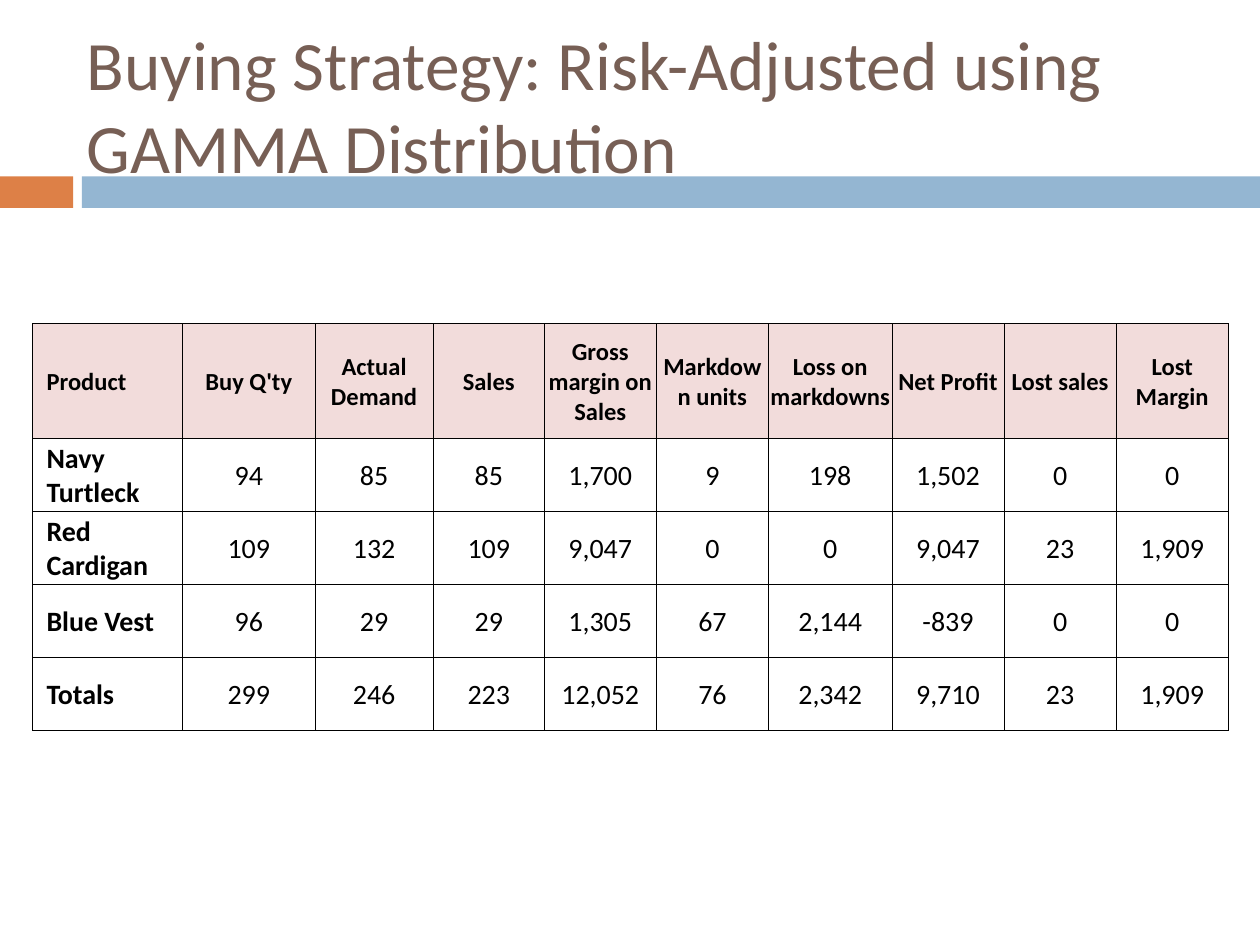
from lxml.etree import SubElement
from pptx import Presentation
from pptx.dml.color import RGBColor
from pptx.enum.shapes import MSO_SHAPE
from pptx.enum.text import MSO_ANCHOR, PP_ALIGN
from pptx.oxml.ns import qn
from pptx.util import Inches, Pt

FONT = "Calibri"
COLUMN_WIDTHS = [1.19, 1.05, 0.94, 0.88, 0.89, 0.89, 0.98, 0.89, 0.89, 0.89]
ROW_HEIGHTS = [0.91, 0.58, 0.58, 0.58, 0.58]
ROWS = [
    ["Product", "Buy Q'ty", "Actual Demand", "Sales", "Gross margin on Sales",
     "Markdown units", "Loss on markdowns", "Net Profit", "Lost sales", "Lost Margin"],
    ["Navy Turtleck", "94", "85", "85", "1,700", "9", "198", "1,502", "0", "0"],
    ["Red Cardigan", "109", "132", "109", "9,047", "0", "0", "9,047", "23", "1,909"],
    ["Blue Vest", "96", "29", "29", "1,305", "67", "2,144", "-839", "0", "0"],
    ["Totals", "299", "246", "223", "12,052", "76", "2,342", "9,710", "23", "1,909"],
]


def color(value):
    return RGBColor.from_string(value)


def set_attributes(target, values):
    for name, value in values.items():
        setattr(target, name, value)


def write_text(paragraph, text, size, text_color, bold=False):
    run = paragraph.add_run()
    run.text = text
    set_attributes(run.font, {"name": FONT, "size": Pt(size), "bold": bold})
    run.font.color.rgb = color(text_color)


def add_bar(slide, left, width, fill):
    shape = slide.shapes.add_shape(
        MSO_SHAPE.RECTANGLE, Inches(left), Inches(1.4), Inches(width), Inches(0.25))
    shape.shadow.inherit = False
    shape.fill.solid()
    shape.fill.fore_color.rgb = color(fill)
    shape.line.fill.background()


def add_title(slide, text):
    box = slide.shapes.add_textbox(Inches(0.59), Inches(0.29), Inches(9.33), Inches(1.08))
    frame = box.text_frame
    set_attributes(frame, {"word_wrap": True, "vertical_anchor": MSO_ANCHOR.MIDDLE})
    write_text(frame.paragraphs[0], text, 39.6, "775F55")


def add_borders(cell, line_color="000000", width=0.5):
    properties = cell._tc.get_or_add_tcPr()
    # Border elements come before the fill in the cell properties
    for index, side in enumerate(("lnL", "lnR", "lnT", "lnB")):
        line = SubElement(properties, qn(f"a:{side}"), w=str(Pt(width)))
        fill = SubElement(line, qn("a:solidFill"))
        SubElement(fill, qn("a:srgbClr"), val=line_color)
        properties.insert(index, line)


def format_cell(cell, text, is_header, is_label):
    set_attributes(cell, {
        "vertical_anchor": MSO_ANCHOR.MIDDLE,
        "margin_left": Inches(0.11 if is_label else 0.01),
        "margin_right": Inches(0.01),
        "margin_top": Inches(0.01),
        "margin_bottom": 0,
    })
    if is_header:
        cell.fill.solid()
        cell.fill.fore_color.rgb = color("F2DCDB")
    else:
        cell.fill.background()
    add_borders(cell)
    paragraph = cell.text_frame.paragraphs[0]
    paragraph.alignment = PP_ALIGN.LEFT if is_label else PP_ALIGN.CENTER
    write_text(paragraph, text, 14 if is_header else 16, "000000", is_header or is_label)


def add_results_table(slide):
    table = slide.shapes.add_table(
        len(ROWS), len(COLUMN_WIDTHS), Inches(0.26), Inches(2.57),
        Inches(sum(COLUMN_WIDTHS)), Inches(sum(ROW_HEIGHTS))).table
    set_attributes(table, {"first_row": False, "horz_banding": False})
    for column, width in zip(table.columns, COLUMN_WIDTHS):
        column.width = Inches(width)
    for row, height in zip(table.rows, ROW_HEIGHTS):
        row.height = Inches(height)
    for row_index, values in enumerate(ROWS):
        for column_index, text in enumerate(values):
            format_cell(table.cell(row_index, column_index), text,
                        row_index == 0, column_index == 0)


def main():
    presentation = Presentation()
    set_attributes(presentation, {"slide_width": Inches(10), "slide_height": Inches(7.5)})
    slide = presentation.slides.add_slide(presentation.slide_layouts[6])

    # Band under the title
    add_bar(slide, 0, 0.58, "DD8047")
    add_bar(slide, 0.65, 9.35, "94B6D2")

    # Results and title
    add_results_table(slide)
    add_title(slide, "Buying Strategy: Risk-Adjusted using GAMMA Distribution")

    presentation.save("out.pptx")


if __name__ == "__main__":
    main()
